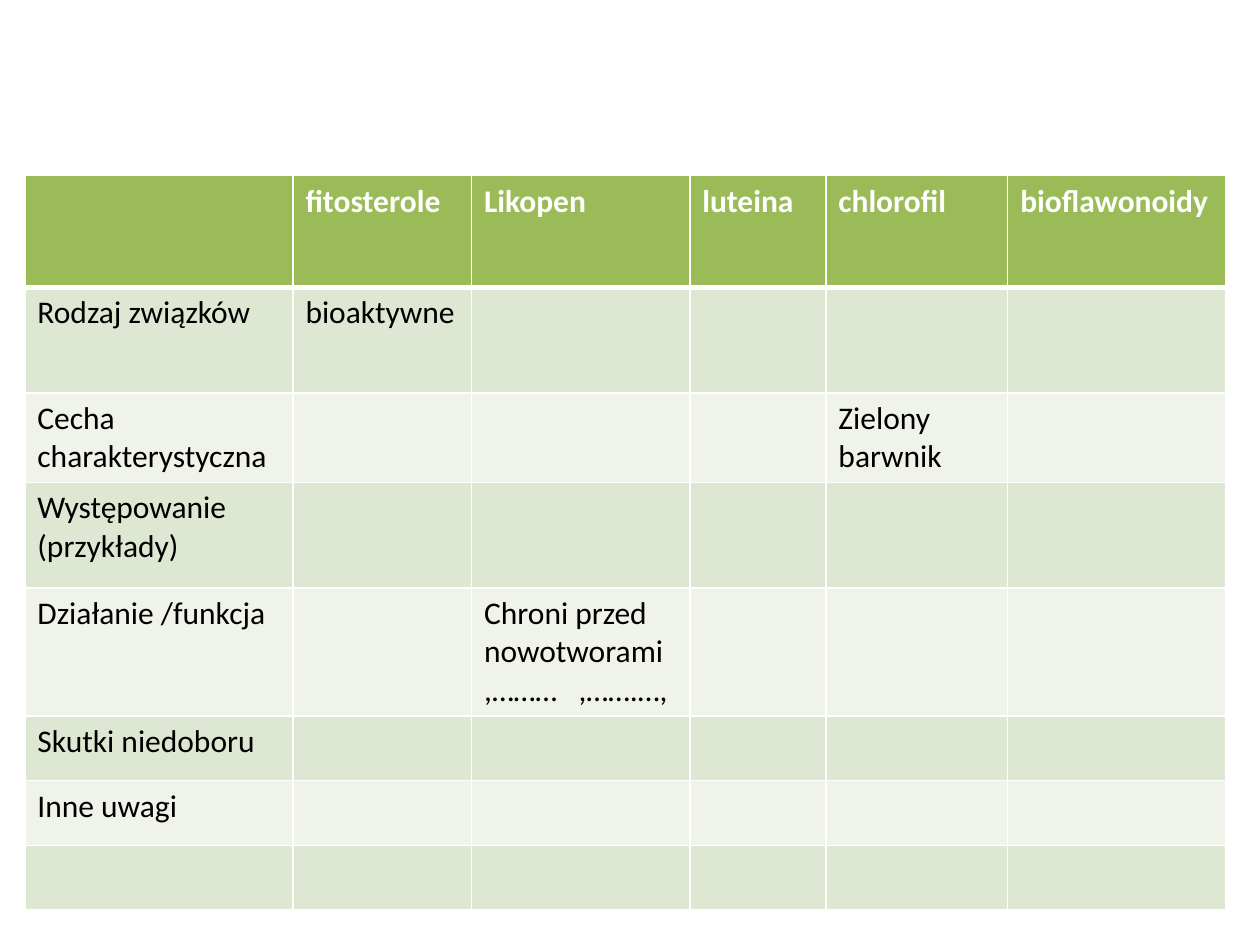
from dataclasses import dataclass

from lxml import etree
from pptx import Presentation
from pptx.dml.color import RGBColor
from pptx.oxml.ns import qn
from pptx.util import Pt

WHITE = RGBColor(0xFF, 0xFF, 0xFF)
BLACK = RGBColor(0x00, 0x00, 0x00)
HEADER_GREEN = RGBColor(0x9B, 0xBB, 0x59)
BAND_DARK = RGBColor(0xDE, 0xE7, 0xD1)
BAND_LIGHT = RGBColor(0xEF, 0xF3, 0xEA)

BLANK_LAYOUT = 6
FONT_NAME = "Calibri"
FONT_SIZE = 18
THIN_BORDER = 1
THICK_BORDER = 3
TABLE_LEFT, TABLE_TOP = 14.2, 100.4
COLUMN_WIDTHS = (153.2, 102.1, 124.7, 77.8, 103.9, 124.4)


@dataclass(frozen=True)
class TableRow:
    height: float
    texts: tuple[str, ...] = ()


ROWS = (
    TableRow(64, ("", "fitosterole", "Likopen", "luteina", "chlorofil", "bioflawonoidy")),
    TableRow(60.2, ("Rodzaj związków", "bioaktywne")),
    TableRow(51.2, ("Cecha charakterystyczna", "", "", "", "Zielony barwnik")),
    TableRow(60.2, ("Występowanie\n(przykłady)",)),
    TableRow(73.2, ("Działanie /funkcja", "", "Chroni przed nowotworami ,………   ,…….…,")),
    TableRow(37, ("Skutki niedoboru",)),
    TableRow(37, ("Inne uwagi",)),
    TableRow(37),
)


def set_borders(cell, top: float, bottom: float) -> None:
    """Draw white borders, with the widths of the horizontal ones in points."""
    properties = cell._tc.get_or_add_tcPr()
    widths = {"a:lnL": THIN_BORDER, "a:lnR": THIN_BORDER, "a:lnT": top, "a:lnB": bottom}
    for position, (tag, width) in enumerate(widths.items()):
        line = etree.Element(qn(tag), w=str(Pt(width)))
        fill = etree.SubElement(line, qn("a:solidFill"))
        etree.SubElement(fill, qn("a:srgbClr"), val=str(WHITE))
        properties.insert(position, line)


def format_cell(cell, text: str, row_index: int) -> None:
    is_header = row_index == 0
    band = BAND_DARK if row_index % 2 else BAND_LIGHT
    cell.fill.solid()
    cell.fill.fore_color.rgb = HEADER_GREEN if is_header else band
    set_borders(
        cell,
        top=THICK_BORDER if row_index == 1 else THIN_BORDER,
        bottom=THICK_BORDER if is_header else THIN_BORDER,
    )
    cell.text = text
    for paragraph in cell.text_frame.paragraphs:
        paragraph.font.name = FONT_NAME
        paragraph.font.size = Pt(FONT_SIZE)
        paragraph.font.bold = is_header
        paragraph.font.color.rgb = WHITE if is_header else BLACK


def add_compound_table(slide) -> None:
    table = slide.shapes.add_table(
        len(ROWS), len(COLUMN_WIDTHS), Pt(TABLE_LEFT), Pt(TABLE_TOP),
        Pt(sum(COLUMN_WIDTHS)), Pt(sum(row.height for row in ROWS)),
    ).table
    for column, width in zip(table.columns, COLUMN_WIDTHS):
        column.width = Pt(width)
    for row_index, row in enumerate(ROWS):
        table.rows[row_index].height = Pt(row.height)
        for column_index in range(len(COLUMN_WIDTHS)):
            text = row.texts[column_index] if column_index < len(row.texts) else ""
            format_cell(table.cell(row_index, column_index), text, row_index)


def main() -> None:
    presentation = Presentation()
    presentation.slide_width = Pt(720)
    presentation.slide_height = Pt(540)
    slide = presentation.slides.add_slide(presentation.slide_layouts[BLANK_LAYOUT])
    add_compound_table(slide)
    presentation.save("out.pptx")


if __name__ == "__main__":
    main()
